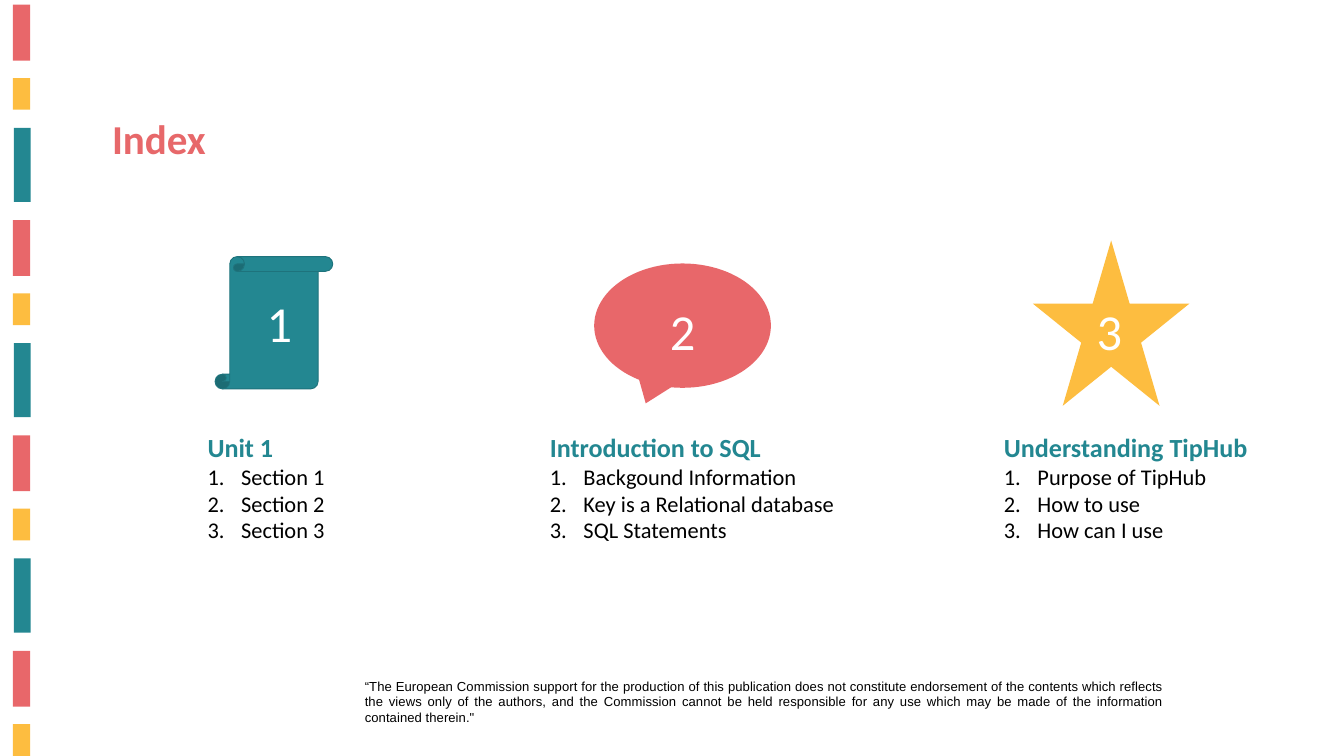
from pptx import Presentation
from pptx.dml.color import RGBColor
from pptx.enum.shapes import MSO_SHAPE as Shape
from pptx.enum.text import MSO_ANCHOR as Anchor, MSO_AUTO_SIZE as AutoSize, PP_ALIGN as Align
from pptx.oxml.ns import qn
from pptx.util import Cm, Pt
from lxml.etree import SubElement

CORAL, YELLOW, TEAL = "E8676A", "FDBD40", "238791"

TITLE = {"name": "Calibri", "size": Pt(44), "bold": True, "color": "E7686A"}
HEADING = {"name": "Calibri", "size": Pt(28), "bold": True, "color": TEAL}
ITEM = {"name": "Calibri", "size": Pt(24), "bold": False, "color": "000000"}
NUMBER = {"name": "Calibri", "size": Pt(54), "color": "FFFFFF"}
NOTICE = {"name": "Arial", "size": Pt(14), "color": "000000"}

# Side band: left, top, width, height and colour of each stripe in one period
STRIPES = [
    (0.49, 0.18, 0.65, 2.11, CORAL),
    (0.49, 2.95, 0.65, 1.2, YELLOW),
    (0.53, 4.83, 0.63, 2.8, TEAL),
]
STRIPE_PERIOD = 8.14
STRIPE_COUNT = 11

# Each unit: placeholder index, list box, icon, number box and wording
UNITS = [
    {"index": 1, "list": (7.59, 16.18, 5.51, 5.74),
     "icon": (Shape.VERTICAL_SCROLL, (8.13, 9.7, 4.45, 5), TEAL, "1E737C"),
     "number": (9.83, 10.92, 4.01, 2.57),
     "heading": "Unit 1",
     "items": ["Section 1", "Section 2", "Section 3"]},
    {"index": 2, "list": (20.53, 16.18, 12.07, 4.52),
     "icon": (Shape.OVAL_CALLOUT, (22.46, 9.96, 6.68, 4.7), CORAL, None),
     "number": (25.07, 11.21, 2.74, 2.57),
     "heading": "Introduction to SQL",
     "items": ["Backgound Information", "Key is a Relational database", "SQL Statements"]},
    {"index": 4, "list": (37.69, 16.18, 9.86, 4.52),
     "icon": (Shape.STAR_5_POINT, (39.04, 9.09, 5.92, 6.25), YELLOW, None),
     "number": (41.2, 11.21, 3.81, 2.57),
     "heading": "Understanding TipHub",
     "items": ["Purpose of TipHub", "How to use", "How can I use"]},
]

NOTICE_TEXT = (
    "“The European Commission support for the production of this publication does not "
    "constitute endorsement of the contents which reflects the views only of the authors, "
    "and the Commission cannot be held responsible for any use which may be made of the "
    "information contained therein.\""
)


def color(value):
    return RGBColor.from_string(value)


def place(shape, area):
    for name, value in zip(("left", "top", "width", "height"), area):
        setattr(shape, name, Cm(value))


def prepare_frame(shape):
    frame = shape.text_frame
    settings = {"word_wrap": True, "auto_size": AutoSize.NONE, "vertical_anchor": Anchor.TOP}
    for name, value in settings.items():
        setattr(frame, name, value)
    return frame


def write(para, text, style, align=Align.LEFT):
    layout = {"alignment": align, "space_before": Pt(0), "space_after": Pt(0), "line_spacing": 1.0}
    for name, value in layout.items():
        setattr(para, name, value)
    span = para.add_run()
    span.text = text
    for name, value in style.items():
        if name == "color":
            span.font.color.rgb = color(value)
        else:
            setattr(span.font, name, value)
    return span


def set_bullet(para, numbered):
    properties = para._p.get_or_add_pPr()
    indent = Cm(1.27) if numbered else 0
    properties.set("marL", str(indent))
    properties.set("indent", str(-indent))
    if numbered:
        SubElement(properties, qn("a:buFont"), typeface="+mj-lt")
        SubElement(properties, qn("a:buAutoNum"), type="arabicPeriod")
    else:
        SubElement(properties, qn("a:buNone"))


def add_figure(slide, preset, area, fill, outline=None):
    figure = slide.shapes.add_shape(preset, *map(Cm, area))
    figure.shadow.inherit = False
    figure.fill.solid()
    figure.fill.fore_color.rgb = color(fill)
    if outline:
        figure.line.color.rgb = color(outline)
        figure.line.width = Pt(1)
    else:
        figure.line.fill.background()


def add_text(slide, area, text, style, align=Align.LEFT):
    box = slide.shapes.add_textbox(*map(Cm, area))
    return write(prepare_frame(box).paragraphs[0], text, style, align)


def add_side_band(slide):
    for number in range(STRIPE_COUNT):
        period, kind = divmod(number, len(STRIPES))
        left, top, width, height, fill = STRIPES[kind]
        area = (left, top + period * STRIPE_PERIOD, width, height)
        add_figure(slide, Shape.RECTANGLE, area, fill)


def fill_title(slide, text):
    title = slide.shapes.title
    place(title, (3.98, 4.17, 17.2, 2.13))
    write(prepare_frame(title).paragraphs[0], text, TITLE)


def fill_list(placeholder, unit):
    place(placeholder, unit["list"])
    frame = prepare_frame(placeholder)
    heading = frame.paragraphs[0]
    set_bullet(heading, numbered=False)
    write(heading, unit["heading"], HEADING)
    for item in unit["items"]:
        para = frame.add_paragraph()
        set_bullet(para, numbered=True)
        write(para, item, ITEM)


def main():
    deck = Presentation()
    deck.slide_width = Cm(50.8)
    deck.slide_height = Cm(50.8 * 9 / 16)
    page = deck.slides.add_slide(deck.slide_layouts.get_by_name("Comparison"))
    bodies = {body.placeholder_format.idx: body for body in page.placeholders}

    # Band and title
    add_side_band(page)
    fill_title(page, "Index")

    # Units with icon, number and list
    for number, unit in enumerate(UNITS, start=1):
        add_figure(page, *unit["icon"])
        add_text(page, unit["number"], str(number), NUMBER)
        fill_list(bodies[unit["index"]], unit)

    # The layout has one body more than there are units
    spare = bodies[3].element
    spare.getparent().remove(spare)

    # Funding notice, slightly letterspaced
    span = add_text(page, (13.54, 25.51, 30.7, 2.06), NOTICE_TEXT, NOTICE, Align.JUSTIFY)
    span._r.get_or_add_rPr().set("spc", "5")

    deck.save("out.pptx")


if __name__ == "__main__":
    main()
